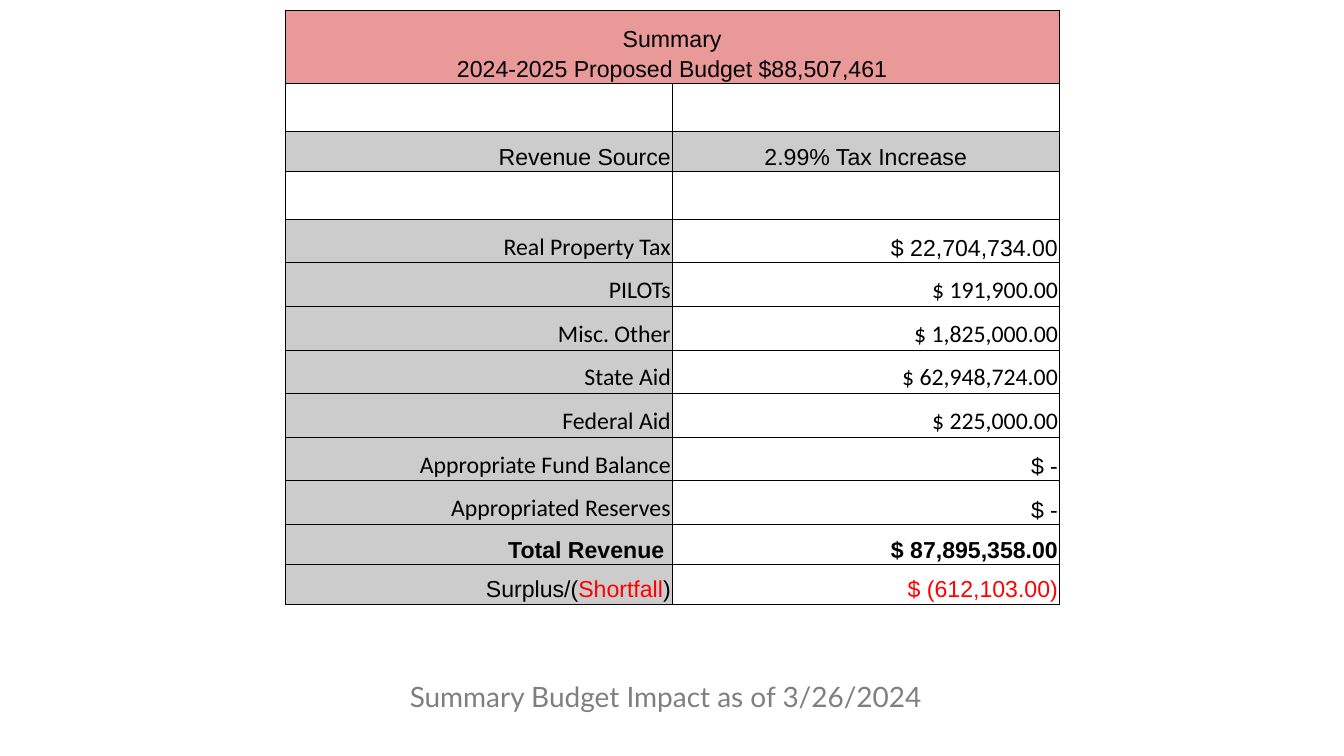
"""Build the summary budget slide: one revenue table and its caption."""
import pptx
import pptx.chart.data
import pptx.dml.color
import pptx.enum.text
import pptx.oxml
import pptx.oxml.ns
import pptx.util

Pt = pptx.util.Pt
ALIGN = pptx.enum.text.PP_ALIGN
ANCHOR = pptx.enum.text.MSO_ANCHOR

COLORS = {"black": "000000", "red": "FF0000", "heading": "EA9999",
          "label": "CCCCCC", "caption": "7F7F7F"}
SIZES = {"Arial": 33, "Calibri": 34}

HEADING = ["Summary", "2024-2025 Proposed Budget $88,507,461"]
COLUMN_HEADS = ["Revenue Source", "2.99% Tax Increase"]
REVENUES = [
    ("Real Property Tax", "$ 22,704,734.00", "Arial"),
    ("PILOTs", "$ 191,900.00", "Calibri"),
    ("Misc. Other", "$ 1,825,000.00", "Calibri"),
    ("State Aid", "$ 62,948,724.00", "Calibri"),
    ("Federal Aid", "$ 225,000.00", "Calibri"),
    ("Appropriate Fund Balance", "$ -", "Arial"),
    ("Appropriated Reserves", "$ -", "Arial"),
]
TOTAL = ("Total Revenue ", "$ 87,895,358.00")
SHORTFALL_LABEL = [("Surplus/(", "black"), ("Shortfall", "red"), (")", "black")]
SHORTFALL = "$ (612,103.00)"
CAPTION = "Summary Budget Impact as of 3/26/2024"

TABLE_LEFT, TABLE_TOP, COLUMN_WIDTH = 407, 15, 553
ROW_HEIGHTS = [104, 68.5, 57, 68.5] + [62.25] * len(REVENUES) + [57, 57]


def rgb(name):
    return pptx.dml.color.RGBColor.from_string(COLORS[name])


def add_borders(cell):
    properties = cell._tc.get_or_add_tcPr()
    for side in ("lnL", "lnR", "lnT", "lnB"):
        properties.append(pptx.oxml.parse_xml(
            f'<a:{side} {pptx.oxml.ns.nsdecls("a")} w="{Pt(0.6)}"><a:solidFill>'
            f'<a:srgbClr val="{COLORS["black"]}"/></a:solidFill></a:{side}>'))


def write_cell(cell, lines, font="Arial", align=ALIGN.RIGHT, fill=None, bold=False):
    cell.vertical_anchor = ANCHOR.BOTTOM
    cell.margin_left = cell.margin_right = Pt(2)
    cell.margin_top = cell.margin_bottom = Pt(1.5)
    if fill:
        cell.fill.solid()
        cell.fill.fore_color.rgb = rgb(fill)
    for index, spans in enumerate(lines):
        frame = cell.text_frame
        para = frame.add_paragraph() if index else frame.paragraphs[0]
        para.alignment = align
        para.line_spacing = 1.15
        para.font.name = font
        para.font.size = Pt(SIZES[font])
        para.font.bold = bold
        for text, color in spans:
            span = para.add_run()
            span.text = text
            span.font.color.rgb = rgb(color)


def plain(text, color="black"):
    return [[(text, color)]]


def add_budget_table(page):
    shape = page.shapes.add_table(len(ROW_HEIGHTS), 2, Pt(TABLE_LEFT), Pt(TABLE_TOP),
                                  Pt(2 * COLUMN_WIDTH), Pt(sum(ROW_HEIGHTS)))
    table = shape.table
    table.first_row = table.horz_banding = False
    for column in table.columns:
        column.width = Pt(COLUMN_WIDTH)
    for row, height in zip(table.rows, ROW_HEIGHTS):
        row.height = Pt(height)
    for cell in table.iter_cells():
        add_borders(cell)
        cell.fill.background()

    table.cell(0, 0).merge(table.cell(0, 1))
    write_cell(table.cell(0, 0), [[(line, "black")] for line in HEADING],
               align=ALIGN.CENTER, fill="heading")
    for column, align in enumerate((ALIGN.RIGHT, ALIGN.CENTER)):
        write_cell(table.cell(2, column), plain(COLUMN_HEADS[column]),
                   align=align, fill="label")
    for row, (label, amount, font) in enumerate(REVENUES, start=4):
        write_cell(table.cell(row, 0), plain(label), "Calibri", fill="label")
        write_cell(table.cell(row, 1), plain(amount), font)
    total_row = 4 + len(REVENUES)
    write_cell(table.cell(total_row, 0), plain(TOTAL[0]), fill="label", bold=True)
    write_cell(table.cell(total_row, 1), plain(TOTAL[1]), bold=True)
    write_cell(table.cell(total_row + 1, 0), [SHORTFALL_LABEL], fill="label")
    write_cell(table.cell(total_row + 1, 1), plain(SHORTFALL, "red"))


def add_caption(page):
    box = page.shapes.title
    box.left, box.top, box.width, box.height = Pt(578), Pt(964), Pt(809), Pt(69)
    frame = box.text_frame
    frame.text = CAPTION
    frame.word_wrap = True
    frame.auto_size = pptx.enum.text.MSO_AUTO_SIZE.NONE
    frame.vertical_anchor = ANCHOR.TOP
    frame.margin_left = frame.margin_right = Pt(7.2)
    frame.margin_top = frame.margin_bottom = Pt(7.2)
    para = frame.paragraphs[0]
    para.alignment = ALIGN.LEFT
    para.font.name = "Lato"
    para.font.size = Pt(40)
    para.font.color.rgb = rgb("caption")


def main():
    deck = pptx.Presentation()
    deck.slide_width, deck.slide_height = Pt(1919.5), Pt(1080)
    page = deck.slides.add_slide(deck.slide_layouts.get_by_name("Title Only"))
    add_budget_table(page)
    add_caption(page)
    deck.save("out.pptx")


if __name__ == "__main__":
    main()
